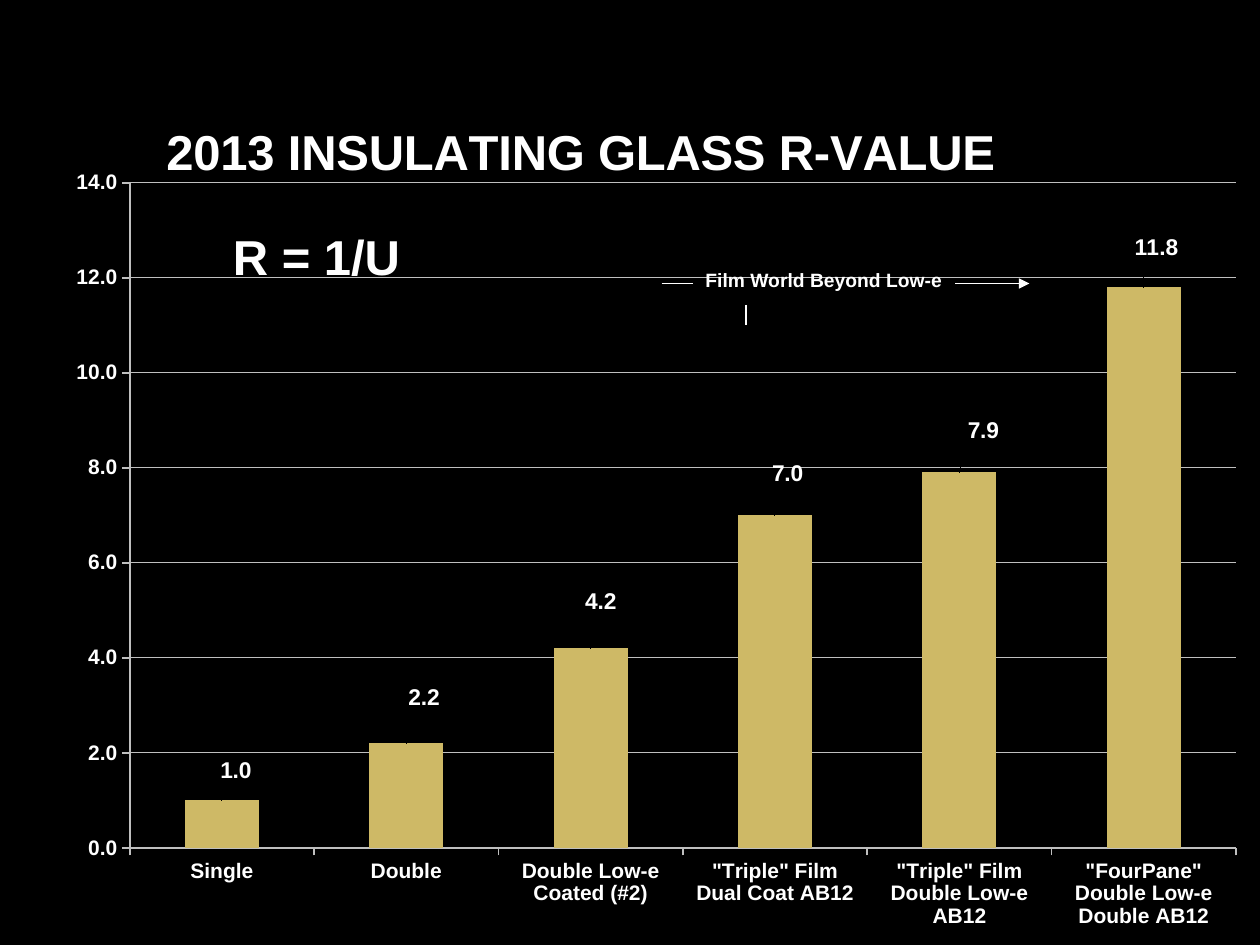
from dataclasses import dataclass

from lxml.etree import SubElement
from pptx import Presentation
from pptx.chart.data import CategoryChartData
from pptx.dml.color import RGBColor
from pptx.enum.chart import XL_CHART_TYPE, XL_LABEL_POSITION, XL_TICK_MARK
from pptx.enum.shapes import MSO_CONNECTOR
from pptx.enum.text import MSO_AUTO_SIZE
from pptx.oxml import parse_xml
from pptx.oxml.ns import nsdecls, qn
from pptx.util import Inches, Pt

BLACK = RGBColor(0x00, 0x00, 0x00)
WHITE = RGBColor(0xFF, 0xFF, 0xFF)
GRID_GRAY = RGBColor(0xBF, 0xBF, 0xBF)
GOLD = RGBColor(0xCE, 0xB9, 0x66)

CHART_WIDTH = 9.58
CHART_HEIGHT = 7
NO_LEADER_LINES = (
    f"<c:extLst {nsdecls('c')}>"
    '<c:ext uri="{CE6537A1-D6FC-4f65-9D91-7224C49458BB}" '
    'xmlns:c15="http://schemas.microsoft.com/office/drawing/2012/chart">'
    '<c15:showLeaderLines val="0"/></c:ext></c:extLst>'
)


@dataclass
class Glass:
    name: str
    r_value: float
    label_dx: float
    label_dy: float


@dataclass
class Note:
    text: str
    left: float
    top: float
    width: float
    height: float
    size: int


@dataclass
class Rule:
    start: tuple[float, float]
    end: tuple[float, float]
    arrow: bool = False


GLASSES = [
    Glass("Single", 1.0, 0.11, -0.09),
    Glass("Double", 2.2, 0.14, -0.22),
    Glass("Double Low-e Coated (#2)", 4.2, 0.08, -0.23),
    Glass('"Triple" Film Dual Coat AB12', 7.0, 0.1, -0.19),
    Glass('"Triple" Film Double Low-e AB12', 7.9, 0.19, -0.19),
    Glass('"FourPane" Double Low-e Double AB12', 11.8, 0.1, -0.17),
]
NOTES = [
    Note("Film World Beyond Low-e", 5.5, 2.08, 2.08, 0.28, 11),
    Note("R = 1/U", 1.75, 1.75, 3, 0.57, 28),
]
RULES = [
    Rule((5.25, 2.25), (5.5, 2.25)),
    Rule((5.92, 2.42), (5.92, 2.58)),
    Rule((7.58, 2.25), (8.17, 2.25), arrow=True),
]


def style_font(font, size: int) -> None:
    font.name = "Arial"
    font.size = Pt(size)
    font.bold = True
    font.color.rgb = WHITE


def place(element, index: int, left: float, top: float, **settings) -> None:
    for old in element.findall(qn("c:layout")):
        element.remove(old)
    layout = parse_xml(f"<c:layout {nsdecls('c')}><c:manualLayout/></c:layout>")
    settings |= {"x": left / CHART_WIDTH, "y": top / CHART_HEIGHT}
    for name in ("layoutTarget", "xMode", "yMode", "x", "y", "w", "h"):
        if name in settings:
            SubElement(layout[0], qn(f"c:{name}")).set("val", str(settings[name]))
    element.insert(index, layout)


def style_axis(axis) -> None:
    style_font(axis.tick_labels.font, 12)
    axis.major_tick_mark = XL_TICK_MARK.OUTSIDE
    axis.minor_tick_mark = XL_TICK_MARK.NONE
    axis.format.line.color.rgb = GRID_GRAY
    axis.format.line.width = Pt(1)


def add_title(chart) -> None:
    chart.has_title = True
    title = chart.chart_title
    title.text_frame.text = "2013 INSULATING GLASS R-VALUE"
    style_font(title.text_frame.paragraphs[0].font, 28)
    element = title._element
    place(element, 1, 0.83, 0.39, xMode="edge", yMode="edge")
    element.find(qn("c:overlay")).set("val", "1")


def add_labels(plot) -> None:
    plot.has_data_labels = True
    labels = plot.data_labels
    labels.show_value = True
    labels.number_format = "0.0"
    labels.number_format_is_linked = False
    style_font(labels.font, 13)
    series = plot.series[0]
    for index in range(len(GLASSES)):
        label = series.points[index].data_label
        style_font(label.font, 13)
        label.position = XL_LABEL_POSITION.OUTSIDE_END
    for element, glass in zip(series._element.iter(qn("c:dLbl")), GLASSES):
        place(element, 1, glass.label_dx, glass.label_dy)
    series._element.find(qn("c:dLbls")).append(parse_xml(NO_LEADER_LINES))


def add_r_value_chart(slide) -> None:
    data = CategoryChartData(number_format="0.0")
    data.categories = [glass.name for glass in GLASSES]
    data.add_series("Series 1", [glass.r_value for glass in GLASSES])
    chart = slide.shapes.add_chart(
        XL_CHART_TYPE.COLUMN_CLUSTERED, Inches(0.42), Inches(0.5),
        Inches(CHART_WIDTH), Inches(CHART_HEIGHT), data,
    ).chart
    chart.has_legend = False
    chart.font.name = "Vollkorn"
    chart.font.size = Pt(10)
    chart.font.color.rgb = WHITE
    add_title(chart)

    plot = chart.plots[0]
    plot.vary_by_categories = False
    plot.gap_width = 150
    fill = plot.series[0].format.fill
    fill.solid()
    fill.fore_color.rgb = GOLD
    add_labels(plot)

    style_axis(chart.category_axis)
    value_axis = chart.value_axis
    style_axis(value_axis)
    value_axis.minimum_scale = 0
    value_axis.maximum_scale = 14
    value_axis.major_unit = 2
    value_axis.tick_labels.number_format = "0.0"
    value_axis.tick_labels.number_format_is_linked = False
    value_axis.has_major_gridlines = True
    value_axis.major_gridlines.format.line.color.rgb = GRID_GRAY
    value_axis.major_gridlines.format.line.width = Pt(0.5)

    plot_area = chart._chartSpace.find(f".//{qn('c:plotArea')}")
    place(plot_area, 0, 0.61, 0.95, layoutTarget="inner", xMode="edge",
          yMode="edge", w=8.78 / CHART_WIDTH, h=5.28 / CHART_HEIGHT)


def add_rule(slide, rule: Rule) -> None:
    points = [Inches(value) for value in (*rule.start, *rule.end)]
    connector = slide.shapes.add_connector(MSO_CONNECTOR.STRAIGHT, *points)
    connector.line.color.rgb = WHITE
    connector.line.width = Pt(0.75)
    if rule.arrow:
        line = connector.line._get_or_add_ln()
        SubElement(line, qn("a:tailEnd")).set("type", "triangle")
    SubElement(connector._element.spPr, qn("a:effectLst"))


def add_note(slide, note: Note) -> None:
    box = slide.shapes.add_textbox(
        Inches(note.left), Inches(note.top), Inches(note.width), Inches(note.height)
    )
    frame = box.text_frame
    frame.word_wrap = True
    frame.auto_size = MSO_AUTO_SIZE.SHAPE_TO_FIT_TEXT
    frame.margin_right = 0
    frame.text = note.text
    style_font(frame.paragraphs[0].font, note.size)


def main() -> None:
    deck = Presentation()
    deck.slide_width = Inches(10)
    deck.slide_height = Inches(7.5)
    slide = deck.slides.add_slide(deck.slide_layouts[6])
    slide.background.fill.solid()
    slide.background.fill.fore_color.rgb = BLACK
    for rule in RULES:
        add_rule(slide, rule)
    add_r_value_chart(slide)
    for note in NOTES:
        add_note(slide, note)
    deck.save("out.pptx")


if __name__ == "__main__":
    main()
